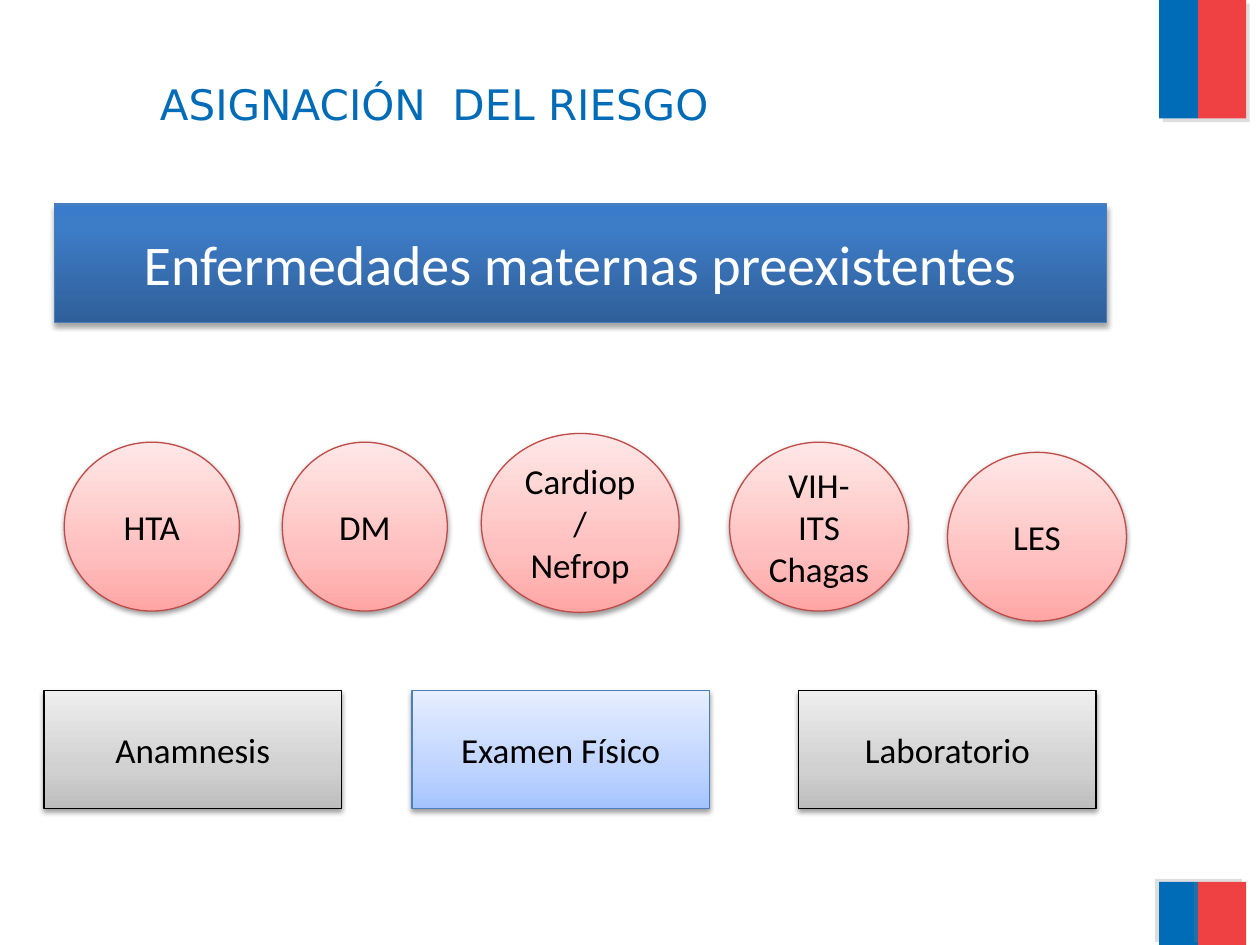
import copy

import pptx
import pptx.dml.color
import pptx.enum.shapes
import pptx.enum.text
import pptx.oxml
import pptx.oxml.ns
import pptx.util

Inches = pptx.util.Inches
Pt = pptx.util.Pt
RGBColor = pptx.dml.color.RGBColor
Shape = pptx.enum.shapes.MSO_SHAPE
Align = pptx.enum.text.PP_ALIGN
Anchor = pptx.enum.text.MSO_ANCHOR
qn = pptx.oxml.ns.qn

BLUE = RGBColor(0x00, 0x6C, 0xB7)
RED = RGBColor(0xEF, 0x41, 0x44)
WHITE = RGBColor(0xFF, 0xFF, 0xFF)
BLACK = RGBColor(0x00, 0x00, 0x00)
GRAY = RGBColor(0x80, 0x80, 0x80)
STEEL = RGBColor(0x4B, 0x7E, 0xBC)
BRICK = RGBColor(0xBF, 0x4C, 0x48)

DEEP_BLUES = [(0, RGBColor(0x2F, 0x5F, 0x99)), (0.8, RGBColor(0x3D, 0x7C, 0xC7)),
              (1, RGBColor(0x3A, 0x7C, 0xCB))]
PINKS = [(0, RGBColor(0xFF, 0xA6, 0xA5)), (0.35, RGBColor(0xFF, 0xC0, 0xBF)),
         (1, RGBColor(0xFF, 0xE7, 0xE7))]
GRAYS = [(0, RGBColor(0xBD, 0xBD, 0xBD)), (0.35, RGBColor(0xD1, 0xD1, 0xD1)),
         (1, RGBColor(0xEE, 0xEE, 0xEE))]
PALE_BLUES = [(0, RGBColor(0xA4, 0xC4, 0xFF)), (0.35, RGBColor(0xBF, 0xD4, 0xFF)),
              (1, RGBColor(0xE6, 0xEE, 0xFF))]


def add_shadow(shape, color, opacity, blur, distance, angle):
    shape.shadow.inherit = False
    effects = shape.element.spPr.find(qn("a:effectLst"))
    effects.append(pptx.oxml.parse_xml(
        '<a:outerShdw xmlns:a="http://schemas.openxmlformats.org/drawingml/2006/main" '
        f'blurRad="{Pt(blur)}" dist="{Pt(distance)}" dir="{angle * 60000}" '
        f'algn="ctr" rotWithShape="0"><a:srgbClr val="{color}">'
        f'<a:alpha val="{opacity * 1000}"/></a:srgbClr></a:outerShdw>'))


def fill_gradient(shape, stops):
    shape.fill.gradient()
    shape.fill.gradient_angle = 90
    stop_list = shape.element.spPr.find(".//" + qn("a:gsLst"))
    stop_list.append(copy.deepcopy(stop_list[0]))
    for stop, (position, color) in zip(shape.fill.gradient_stops, stops):
        stop.position = position
        stop.color.rgb = color


def write_lines(frame, lines, size, font, color, align):
    frame.word_wrap = True
    frame.vertical_anchor = Anchor.MIDDLE
    for index, line in enumerate(lines):
        para = frame.paragraphs[0] if index == 0 else frame.add_paragraph()
        para.text = line
        para.alignment = align
        para.font.size = Pt(size)
        para.font.name = font
        para.font.color.rgb = color


def add_bar(page, left, top, width, height, color, shadow_angle):
    bar = page.shapes.add_shape(Shape.RECTANGLE, Inches(left), Inches(top),
                                Inches(width), Inches(height))
    bar.fill.solid()
    bar.fill.fore_color.rgb = color
    bar.line.fill.background()
    add_shadow(bar, GRAY, 25, 0, 3, shadow_angle)


def add_title(page, text):
    box = page.shapes.add_textbox(Inches(0.17), Inches(0.17), Inches(8.93), Inches(1.25))
    box.text_frame.margin_left = Inches(1.1)
    box.text_frame.margin_top = Inches(0.11)
    write_lines(box.text_frame, [text], 24, "DejaVu Sans", BLUE, Align.LEFT)


def add_label(page, kind, place, lines, stops, outline, size=20, color=BLACK,
              opacity=38, distance=1.6):
    label = page.shapes.add_shape(kind, *(Inches(length) for length in place))
    fill_gradient(label, stops)
    label.line.color.rgb = outline
    label.line.width = Pt(0.75)
    add_shadow(label, BLACK, opacity, 3.1, distance, 90)
    write_lines(label.text_frame, lines, size, "Calibri", color, Align.CENTER)


def main():
    deck = pptx.Presentation()
    deck.slide_width = Inches(10)
    deck.slide_height = Inches(7.5)
    page = deck.slides.add_slide(deck.slide_layouts[6])

    add_bar(page, 9.2, -0.01, 0.31, 0.95, BLUE, 45)
    add_bar(page, 9.51, 0, 0.38, 0.94, RED, 45)
    add_bar(page, 9.2, 7, 0.31, 0.5, BLUE, 215)
    add_bar(page, 9.51, 7, 0.38, 0.5, RED, 215)

    add_title(page, "ASIGNACIÓN  DEL RIESGO")
    add_label(page, Shape.RECTANGLE, (0.43, 1.62, 8.35, 0.94),
              ["Enfermedades maternas preexistentes"], DEEP_BLUES, STEEL,
              size=32, color=WHITE, opacity=35, distance=1.8)

    diseases = [
        ((0.51, 3.51, 1.39, 1.34), ["HTA"]),
        ((2.24, 3.51, 1.31, 1.34), ["DM"]),
        ((3.82, 3.44, 1.57, 1.42), ["Cardiop/", "Nefrop"]),
        ((5.79, 3.51, 1.42, 1.34), ["VIH-ITS", "Chagas"]),
        ((7.52, 3.59, 1.42, 1.34), ["LES"]),
    ]
    for place, lines in diseases:
        add_label(page, Shape.OVAL, place, lines, PINKS, BRICK)

    methods = [
        (0.35, "Anamnesis", GRAYS, BLACK),
        (3.27, "Examen Físico", PALE_BLUES, STEEL),
        (6.34, "Laboratorio", GRAYS, BLACK),
    ]
    for left, name, stops, outline in methods:
        add_label(page, Shape.RECTANGLE, (left, 5.48, 2.36, 0.94), [name], stops, outline)

    deck.save("out.pptx")


if __name__ == "__main__":
    main()
